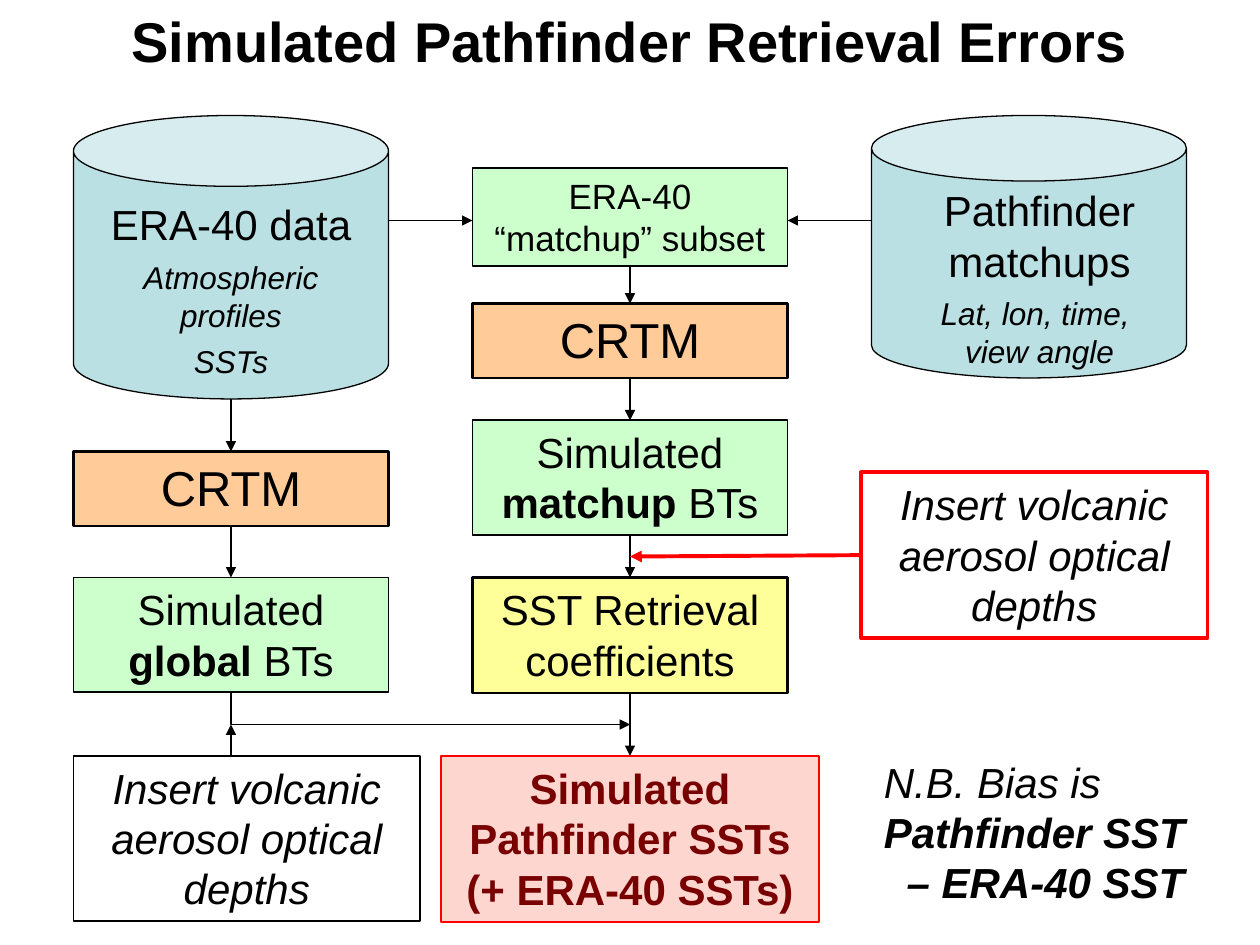
"""Build the flow diagram slide on simulated Pathfinder retrieval errors."""
from dataclasses import dataclass
from typing import Optional, Union

from lxml import etree
from pptx import Presentation
from pptx.dml.color import RGBColor
from pptx.enum.shapes import MSO_CONNECTOR, MSO_SHAPE
from pptx.enum.text import MSO_ANCHOR, PP_ALIGN
from pptx.oxml.ns import qn
from pptx.shapes.autoshape import Shape
from pptx.shapes.connector import Connector
from pptx.slide import Slide
from pptx.util import Pt

RECT, CAN = MSO_SHAPE.RECTANGLE, MSO_SHAPE.CAN
STRAIGHT, ELBOW = MSO_CONNECTOR.STRAIGHT, MSO_CONNECTOR.ELBOW
CENTER, LEFT = PP_ALIGN.CENTER, PP_ALIGN.LEFT
TOP = MSO_ANCHOR.TOP
TOP_SIDE, LEFT_SIDE, BOTTOM_SIDE = 0, 1, 2


@dataclass(frozen=True)
class Theme:
    """Colours, font and type sizes of the slide."""
    font: str = "Arial"
    black: str = "000000"
    white: str = "FFFFFF"
    red: str = "FF0000"
    store: str = "BBE0E3"
    data: str = "CCFFCC"
    model: str = "FFCC99"
    coefficients: str = "FFFF99"
    result: str = "FEAFA2"
    result_text: str = "780000"
    title: int = 32
    process: int = 28
    body: int = 24
    subset: int = 20
    detail: int = 18


THEME = Theme()


@dataclass(frozen=True)
class Run:
    """A stretch of text in one style."""
    text: str
    bold: bool = False
    italic: bool = False


@dataclass(frozen=True)
class Para:
    """A paragraph of runs at one size."""
    runs: tuple[Run, ...]
    size: int = THEME.body
    before: float = 0
    align: PP_ALIGN = CENTER
    indent: float = 0
    color: str = THEME.black


@dataclass(frozen=True)
class Box:
    """A shape or text area with its place, look and text."""
    left: float
    top: float
    width: float
    height: float
    paras: tuple[Para, ...] = ()
    fill: Optional[str] = None
    line: Optional[str] = THEME.black
    weight: float = 1
    kind: MSO_SHAPE = RECT
    opacity: int = 100


@dataclass(frozen=True)
class Joint:
    """The middle of one side of a drawn box."""
    box: str
    side: int


End = Union[Joint, tuple[float, float]]


@dataclass(frozen=True)
class Arrow:
    """An arrow between two ends."""
    start: End
    end: End
    color: str = THEME.black
    weight: float = 1


def rgb(color: str) -> RGBColor:
    """Return the colour for a hex string."""
    return RGBColor.from_string(color)


def write(shape: Shape, paras: tuple[Para, ...]) -> None:
    """Fill a shape with paragraphs, run by run."""
    frame = shape.text_frame
    frame.word_wrap = True
    frame.vertical_anchor = TOP
    for index, para in enumerate(paras):
        paragraph = frame.add_paragraph() if index else frame.paragraphs[0]
        paragraph.alignment = para.align
        paragraph.space_before = Pt(para.before)
        if para.indent:
            paragraph._p.get_or_add_pPr().set("marL", str(Pt(para.indent)))
        for part in para.runs:
            for number, text in enumerate(part.text.split("\n")):
                if number:
                    paragraph.add_line_break()
                run = paragraph.add_run()
                run.text = text
                run.font.name, run.font.size = THEME.font, Pt(para.size)
                run.font.bold, run.font.italic = part.bold, part.italic
                run.font.color.rgb = rgb(para.color)


def draw_box(slide: Slide, box: Box) -> Shape:
    """Draw a box, or a plain text area if it has neither fill nor line."""
    place = [Pt(value) for value in (box.left, box.top, box.width, box.height)]
    if box.fill is None and box.line is None:
        shape = slide.shapes.add_textbox(*place)
    else:
        shape = slide.shapes.add_shape(box.kind, *place)
        shape.shadow.inherit = False
        if box.fill:
            shape.fill.solid()
            shape.fill.fore_color.rgb = rgb(box.fill)
            if box.opacity < 100:
                tint = shape._element.spPr.find(f"{qn('a:solidFill')}/{qn('a:srgbClr')}")
                etree.SubElement(tint, qn("a:alpha"), val=str(box.opacity * 1000))
        else:
            shape.fill.background()
        if box.line:
            shape.line.color.rgb = rgb(box.line)
            shape.line.width = Pt(box.weight)
        else:
            shape.line.fill.background()
    if box.paras:
        write(shape, box.paras)
    return shape


def draw_arrow(slide: Slide, drawn: dict[str, Shape], arrow: Arrow,
               kind: MSO_CONNECTOR = STRAIGHT) -> Connector:
    """Draw an arrow, joined to boxes where its ends are joints."""
    points = [(0, 0) if isinstance(end, Joint) else end for end in (arrow.start, arrow.end)]
    connector = slide.shapes.add_connector(kind, *(Pt(v) for point in points for v in point))
    if isinstance(arrow.start, Joint):
        connector.begin_connect(drawn[arrow.start.box], arrow.start.side)
    if isinstance(arrow.end, Joint):
        connector.end_connect(drawn[arrow.end.box], arrow.end.side)
    connector.line.color.rgb = rgb(arrow.color)
    connector.line.width = Pt(arrow.weight)
    properties = connector._element.spPr
    etree.SubElement(properties.find(qn("a:ln")), qn("a:tailEnd"), type="triangle")
    etree.SubElement(properties, qn("a:effectLst"))
    return connector


def draw_corner(slide: Slide, x1: float, y1: float, x2: float, y2: float) -> None:
    """Draw an arrow that goes down and then right, as a quarter-turned elbow."""
    mid_x, mid_y = (x1 + x2) / 2, (y1 + y2) / 2
    half_run, half_drop = (x2 - x1) / 2, (y2 - y1) / 2
    elbow = draw_arrow(slide, {}, Arrow((mid_x + half_drop, mid_y - half_run),
                                        (mid_x - half_drop, mid_y + half_run)), ELBOW)
    properties = elbow._element.spPr
    properties.find(qn("a:prstGeom")).set("prst", "bentConnector2")
    properties.find(qn("a:xfrm")).set("rot", str(270 * 60000))


def simulated(scope: str) -> tuple[Para, ...]:
    """Return the label of a simulated data box."""
    return (Para((Run("Simulated "), Run(scope, bold=True), Run(" BTs"))),)


def detail(text: str) -> Para:
    """Return a small italic line under a data store's name."""
    return Para((Run(text, italic=True),), THEME.detail, before=5)


def main() -> None:
    """Build and save the slide."""
    deck = Presentation()
    deck.slide_width, deck.slide_height = Pt(720), Pt(540)
    slide = deck.slides.add_slide(deck.slide_layouts[6])
    global_x, matchup_x, width = 42, 270, 180
    global_mid, matchup_mid = global_x + width / 2, matchup_x + width / 2
    crtm = (Para((Run("CRTM"),), THEME.process),)
    volcanic = (Para((Run("Insert volcanic aerosol optical depths", italic=True),)),)
    boxes = {
        "title": Box(0, 0, 720, 45, (Para((Run("Simulated Pathfinder Retrieval Errors", True),),
                                          THEME.title),), THEME.white, None),
        "era store": Box(global_x, 66, width, 162, (), THEME.store, weight=0.75, kind=CAN),
        "era text": Box(48, 110, 168, 112, (Para((Run("ERA-40 data"),)),
                        detail("Atmospheric profiles"), detail("SSTs")), line=None),
        "pathfinder store": Box(498, 66, width, 150, (), THEME.store, weight=0.75, kind=CAN),
        "pathfinder text": Box(510, 102, 168, 113, (Para((Run("Pathfinder matchups"),)),
                               detail("Lat, lon, time, \nview angle")), line=None),
        "subset": Box(matchup_x, 96, width, 56, (Para((Run("ERA-40\n“matchup” subset"),),
                                                      THEME.subset),), THEME.data),
        "matchup crtm": Box(matchup_x, 173.5, width, 42.5, crtm, THEME.model, weight=1.5),
        "matchup bts": Box(matchup_x, 240.2, width, 65.5, simulated("matchup"), THEME.data),
        "coefficients": Box(matchup_x, 330, width, 66, (Para((Run("SST Retrieval coefficients"),)),),
                            THEME.coefficients, weight=1.5),
        "result": Box(252, 432, 216, 95, (Para((Run("Simulated Pathfinder SSTs (+ ERA-40 SSTs)", True),),
                                               color=THEME.result_text),),
                      THEME.result, THEME.red, 1.5, opacity=50),
        "global crtm": Box(global_x, 258, width, 42.5, crtm, THEME.model, weight=1.5),
        "global bts": Box(global_x, 330, width, 65.5, simulated("global"), THEME.data),
        "global aerosol": Box(global_x, 432, 198, 94.5, volcanic),
        "matchup aerosol": Box(492, 270, 198, 94.5, volcanic, line=THEME.red, weight=2.25),
        "bias note": Box(498, 428.5, 198, 93.5, (
            Para((Run("N.B. Bias is", italic=True),), align=LEFT),
            Para((Run("Pathfinder SST", True, True),), align=LEFT),
            Para((Run("– ERA-40 SST", True, True),), align=LEFT, indent=13)), line=None),
    }
    drawn = {part: draw_box(slide, box) for part, box in boxes.items()}
    chain = ("subset", "matchup crtm", "matchup bts", "coefficients", "result")
    steps = [*zip(chain, chain[1:]), ("global crtm", "global bts")]
    arrows = [Arrow(Joint(a, BOTTOM_SIDE), Joint(b, TOP_SIDE)) for a, b in steps]
    arrows += [
        Arrow((global_mid, 228), Joint("global crtm", TOP_SIDE)),
        Arrow((global_x + width, 126), (matchup_x, 126)),
        Arrow((498, 126), (matchup_x + width, 126)),
        Arrow(Joint("matchup aerosol", LEFT_SIDE), (matchup_mid, 318), THEME.red, 2.25),
        Arrow((global_mid, 432), (global_mid, 414), weight=0.75),
    ]
    for arrow in arrows:
        draw_arrow(slide, drawn, arrow)
    draw_corner(slide, global_mid, 396, matchup_mid, 414)
    deck.save("out.pptx")


if __name__ == "__main__":
    main()
